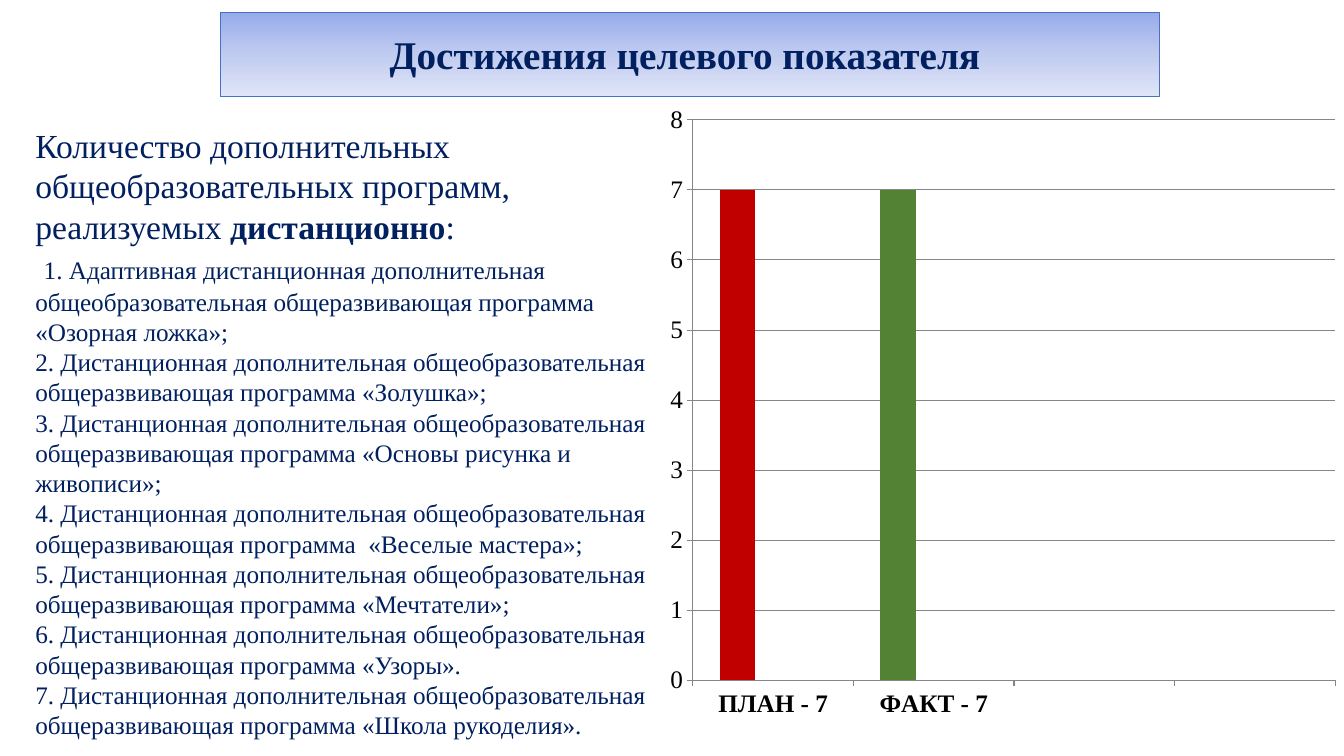
from dataclasses import dataclass

from lxml import etree
from pptx import Presentation
from pptx.chart.data import CategoryChartData
from pptx.dml.color import RGBColor
from pptx.enum.chart import XL_CHART_TYPE, XL_TICK_MARK
from pptx.enum.text import MSO_ANCHOR, MSO_AUTO_SIZE, PP_ALIGN
from pptx.oxml import parse_xml
from pptx.oxml.ns import nsdecls, qn
from pptx.util import Cm, Pt

COLUMNS = XL_CHART_TYPE.COLUMN_CLUSTERED
TICK_OUT = XL_TICK_MARK.OUTSIDE
MIDDLE, TOP = MSO_ANCHOR.MIDDLE, MSO_ANCHOR.TOP
GROW = MSO_AUTO_SIZE.SHAPE_TO_FIT_TEXT
CENTER = PP_ALIGN.CENTER

NAVY = RGBColor(0x00, 0x20, 0x60)
BLUE = RGBColor(0x44, 0x72, 0xC4)
ORANGE = RGBColor(0xED, 0x7D, 0x31)
GRAY = RGBColor(0xA5, 0xA5, 0xA5)
RED = RGBColor(0xC0, 0x00, 0x00)
GREEN = RGBColor(0x54, 0x82, 0x35)
BLACK = RGBColor(0x00, 0x00, 0x00)
AXIS_GRAY = RGBColor(0x86, 0x86, 0x86)
BANNER_TOP = RGBColor(0x96, 0xAB, 0xEA)
BANNER_MIDDLE = RGBColor(0xC0, 0xCB, 0xF0)
BANNER_BOTTOM = RGBColor(0xE0, 0xE5, 0xF7)
SERIF = "Times New Roman"


@dataclass
class Span:
    text: str
    size: int = 18
    bold: bool = False


@dataclass
class Series:
    name: str
    values: tuple
    color: RGBColor


REMOTE = "Дистанционная дополнительная общеобразовательная общеразвивающая программа"
PROGRAMS = ["«Золушка»;", "«Основы рисунка и живописи»;", " «Веселые мастера»;",
            "«Мечтатели»;", "«Узоры».", "«Школа рукоделия»."]
PARAGRAPHS = [
    [Span("Количество дополнительных общеобразовательных программ, реализуемых ", 24),
     Span("дистанционно", 24, True), Span(":", 24)],
    [Span(" ", 24),
     Span("1. Адаптивная дистанционная дополнительная общеобразовательная "
          "общеразвивающая программа «Озорная ложка»;")],
] + [[Span(f"{n}. {REMOTE} {program}")] for n, program in enumerate(PROGRAMS, 2)]

CATEGORIES = ["ПЛАН - 7", "ФАКТ - 7", "", ""]
SERIES = [
    Series("Series 1", (7, 7, None, None), BLUE),
    Series("Series 2", (None,) * 4, ORANGE),
    Series("Series 3", (None,) * 4, GRAY),
]
BAR_COLORS = [RED, GREEN]
PLOT_AREA = {"x": 0.063, "y": 0.032, "w": 0.925, "h": 0.887}


def set_font(font, size: int, bold: bool, color: RGBColor) -> None:
    font.name = SERIF
    font.size = Pt(size)
    font.bold = bold
    font.color.rgb = color


def format_title(sp) -> None:
    sp.left, sp.top, sp.width, sp.height = Cm(5.56), Cm(0.64), Cm(23.65), Cm(1.45)
    sp.fill.gradient()
    sp.fill.gradient_angle = 270
    first, last = sp.fill.gradient_stops
    first.color.rgb, first.position = BANNER_TOP, 0
    last.color.rgb, last.position = BANNER_BOTTOM, 1
    stops = next(sp.element.iter(qn("a:gsLst")))
    stops.insert(1, parse_xml(f'<a:gs {nsdecls("a")} pos="50000">'
                              f'<a:srgbClr val="{BANNER_MIDDLE}"/></a:gs>'))
    sp.line.color.rgb = BLUE
    sp.line.width = Pt(0.5)
    tf = sp.text_frame
    tf.text = "Достижения целевого показателя "
    tf.word_wrap = True
    tf.auto_size = GROW
    tf.vertical_anchor = MIDDLE
    p = tf.paragraphs[0]
    p.alignment = CENTER
    p.line_spacing = 1.0
    p.space_before = Pt(0)
    set_font(p.runs[0].font, 28, True, NAVY)


def add_programs(slide) -> None:
    tf = slide.shapes.add_textbox(Cm(0.64), Cm(3.02), Cm(17.22), Cm(17.45)).text_frame
    tf.word_wrap = True
    tf.auto_size = GROW
    tf.vertical_anchor = TOP
    for i, spans in enumerate(PARAGRAPHS):
        p = tf.add_paragraph() if i else tf.paragraphs[0]
        for span in spans:
            r = p.add_run()
            r.text = span.text
            set_font(r.font, span.size, span.bold, NAVY)


def set_plot_area(chart) -> None:
    """Fix the inner plot area as fractions of the chart frame."""
    plot_area = next(chart.element.iter(qn("c:plotArea")))
    for old in plot_area.findall(qn("c:layout")):
        plot_area.remove(old)
    layout = parse_xml(f'<c:layout {nsdecls("c")}><c:manualLayout/></c:layout>')
    settings = {"layoutTarget": "inner", "xMode": "edge", "yMode": "edge", **PLOT_AREA}
    for tag, value in settings.items():
        etree.SubElement(layout[0], qn(f"c:{tag}")).set("val", str(value))
    plot_area.insert(0, layout)


def add_plan_chart(slide) -> None:
    data = CategoryChartData()
    data.categories = CATEGORIES
    for series in SERIES:
        data.add_series(series.name, series.values)
    chart = slide.shapes.add_chart(COLUMNS, Cm(16.36), Cm(2.51), Cm(17.5), Cm(15.93),
                                   data).chart
    chart.has_legend = False
    chart.has_title = False
    chart.font.name = "Calibri"
    chart.font.size = Pt(18)
    chart.font.color.rgb = BLACK
    plot = chart.plots[0]
    plot.gap_width = 150
    plot.overlap = 0
    plot.vary_by_categories = False
    for series, bars in zip(SERIES, plot.series):
        bars.format.fill.solid()
        bars.format.fill.fore_color.rgb = series.color
    for i, color in enumerate(BAR_COLORS):
        fill = plot.series[0].points[i].format.fill
        fill.solid()
        fill.fore_color.rgb = color

    for axis, bold in ((chart.category_axis, True), (chart.value_axis, False)):
        axis.major_tick_mark = TICK_OUT
        axis.format.line.color.rgb = AXIS_GRAY
        set_font(axis.tick_labels.font, 18, bold, BLACK)
    axis = chart.value_axis
    axis.minimum_scale, axis.maximum_scale, axis.major_unit = 0, 8, 1
    axis.has_major_gridlines = True
    axis.major_gridlines.format.line.color.rgb = AXIS_GRAY
    set_plot_area(chart)


def main() -> None:
    prs = Presentation()
    prs.slide_width, prs.slide_height = Cm(33.87), Cm(19.05)
    slide = prs.slides.add_slide(prs.slide_layouts[5])
    format_title(slide.shapes.title)
    add_programs(slide)
    add_plan_chart(slide)
    prs.save("out.pptx")


if __name__ == "__main__":
    main()
